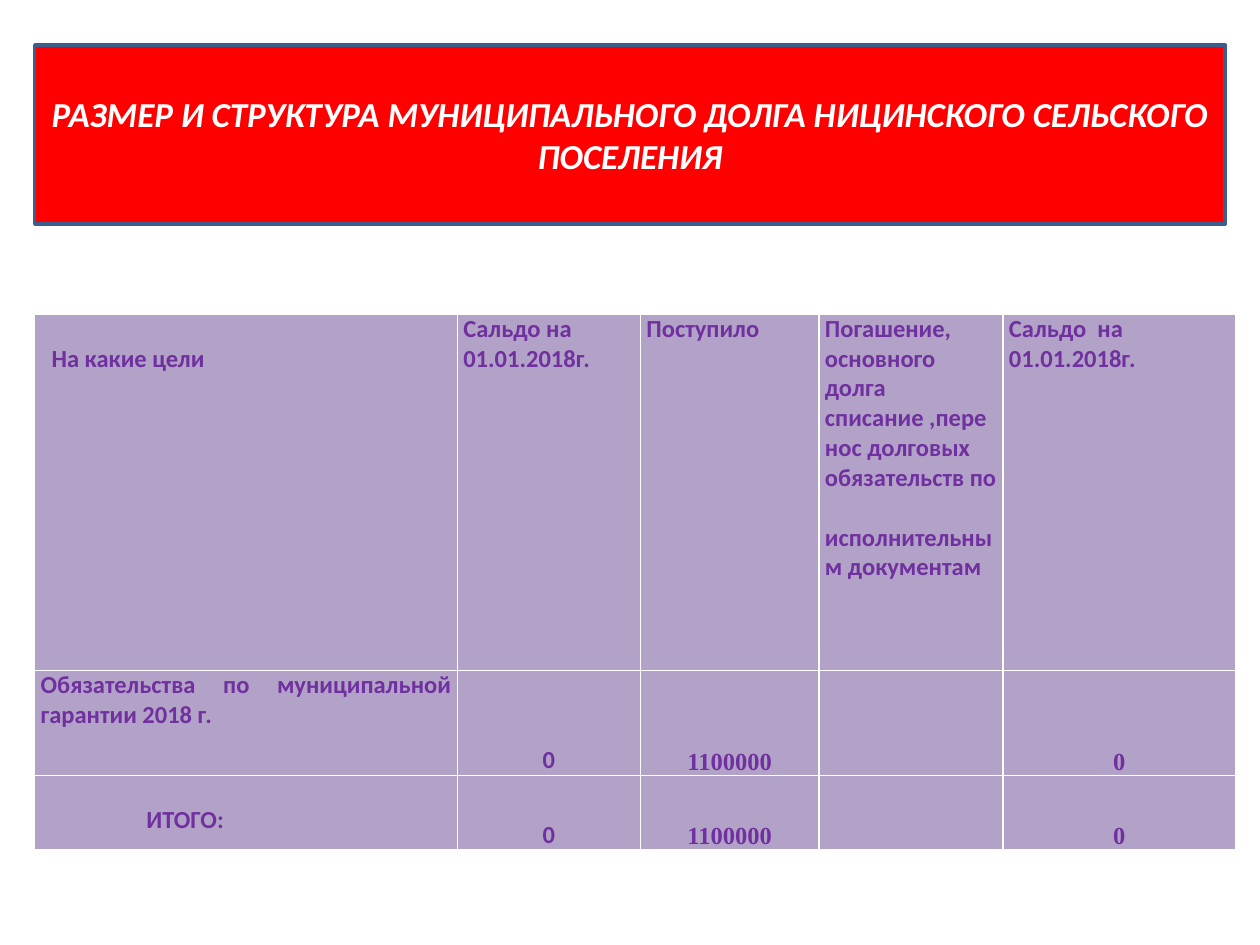
from lxml.etree import SubElement
from pptx import Presentation
from pptx.dml.color import RGBColor
from pptx.enum.shapes import MSO_SHAPE
from pptx.enum.text import MSO_ANCHOR, PP_ALIGN
from pptx.oxml.ns import qn
from pptx.util import Cm, Pt

RED = RGBColor(0xFF, 0x00, 0x00)
BLUE = RGBColor(0x3A, 0x5F, 0x8C)
WHITE = RGBColor(0xFF, 0xFF, 0xFF)
LILAC = RGBColor(0xB3, 0xA2, 0xC7)
PURPLE = RGBColor(0x70, 0x30, 0xA0)

SANS, SERIF = "Calibri", "Times New Roman"
LEFT, CENTER, JUSTIFY = PP_ALIGN.LEFT, PP_ALIGN.CENTER, PP_ALIGN.JUSTIFY

COLUMNS = [8.52, 3.69, 3.6, 3.71, 4.69]
ROWS = [7.19, 2.11, 1.5]
HEADERS = [
    ("На какие цели", JUSTIFY),
    ("Сальдо на\n01.01.2018г.", JUSTIFY),
    ("Поступило", LEFT),
    ("Погашение, основного долга списание ,перенос долговых "
     "обязательств по  исполнительным документам", LEFT),
    ("Сальдо  на\n01.01.2018г.", JUSTIFY),
]
LABELS = ["Обязательства по муниципальной гарантии 2018 г.", "ИТОГО:"]
AMOUNTS = [("0", SANS), ("1100000", SERIF), ("", SANS), ("0", SERIF)]
LINE_HEIGHT = Cm(0.6)


def add_banner(slide, left, top, width, height):
    sp = slide.shapes.add_shape(MSO_SHAPE.RECTANGLE, left, top, width, height)
    sp.shadow.inherit = False
    sp.fill.solid()
    sp.fill.fore_color.rgb = RED
    sp.line.color.rgb = BLUE
    sp.line.width = Pt(2)
    tf = sp.text_frame
    tf.word_wrap = True
    tf.vertical_anchor = MSO_ANCHOR.MIDDLE
    p = tf.paragraphs[0]
    p.text = "РАЗМЕР И СТРУКТУРА МУНИЦИПАЛЬНОГО ДОЛГА НИЦИНСКОГО СЕЛЬСКОГО ПОСЕЛЕНИЯ"
    p.alignment = CENTER
    p.font.name, p.font.size = SANS, Pt(20)
    p.font.bold = p.font.italic = True
    p.font.color.rgb = WHITE


def set_borders(cell):
    tc_pr = cell._tc.get_or_add_tcPr()
    for i, side in enumerate(("lnL", "lnR", "lnT", "lnB")):
        ln = tc_pr.makeelement(qn(f"a:{side}"), {"w": str(Pt(1))})
        fill = SubElement(ln, qn("a:solidFill"))
        SubElement(fill, qn("a:srgbClr"), val=str(WHITE))
        tc_pr.insert(i, ln)


def fill_cell(cell, text, align, font=SANS, anchor=MSO_ANCHOR.TOP):
    cell.fill.solid()
    cell.fill.fore_color.rgb = LILAC
    set_borders(cell)
    cell.margin_left = cell.margin_right = Cm(0.12)
    cell.margin_top = cell.margin_bottom = 0
    cell.vertical_anchor = anchor
    cell.text = text
    for p in cell.text_frame.paragraphs:
        p.alignment = align
        p.font.name, p.font.size, p.font.bold = font, Pt(14), True
        p.font.color.rgb = PURPLE


def indent_label(cell, indent):
    """Start the label one line lower and further right."""
    cell.margin_top = LINE_HEIGHT
    cell.margin_left += indent


def add_debt_table(slide, left, top):
    table = slide.shapes.add_table(len(ROWS), len(COLUMNS), left, top,
                                   Cm(sum(COLUMNS)), Cm(sum(ROWS))).table
    table.first_row = table.horz_banding = False
    for column, width in zip(table.columns, COLUMNS):
        column.width = Cm(width)
    for row, height in zip(table.rows, ROWS):
        row.height = Cm(height)

    for c, (text, align) in enumerate(HEADERS):
        fill_cell(table.cell(0, c), text, align)
    for r, label in enumerate(LABELS, start=1):
        fill_cell(table.cell(r, 0), label, JUSTIFY)
        for c, (amount, font) in enumerate(AMOUNTS, start=1):
            fill_cell(table.cell(r, c), amount, CENTER, font, MSO_ANCHOR.BOTTOM)
    indent_label(table.cell(0, 0), Cm(0.22))
    indent_label(table.cell(2, 0), Cm(2.13))


def main():
    prs = Presentation()
    prs.slide_width, prs.slide_height = Cm(25.4), Cm(19.05)
    slide = prs.slides.add_slide(prs.slide_layouts[6])
    add_debt_table(slide, Cm(0.7), Cm(6.33))
    add_banner(slide, Cm(0.7), Cm(0.91), Cm(24), Cm(3.61))
    prs.save("out.pptx")


if __name__ == "__main__":
    main()
